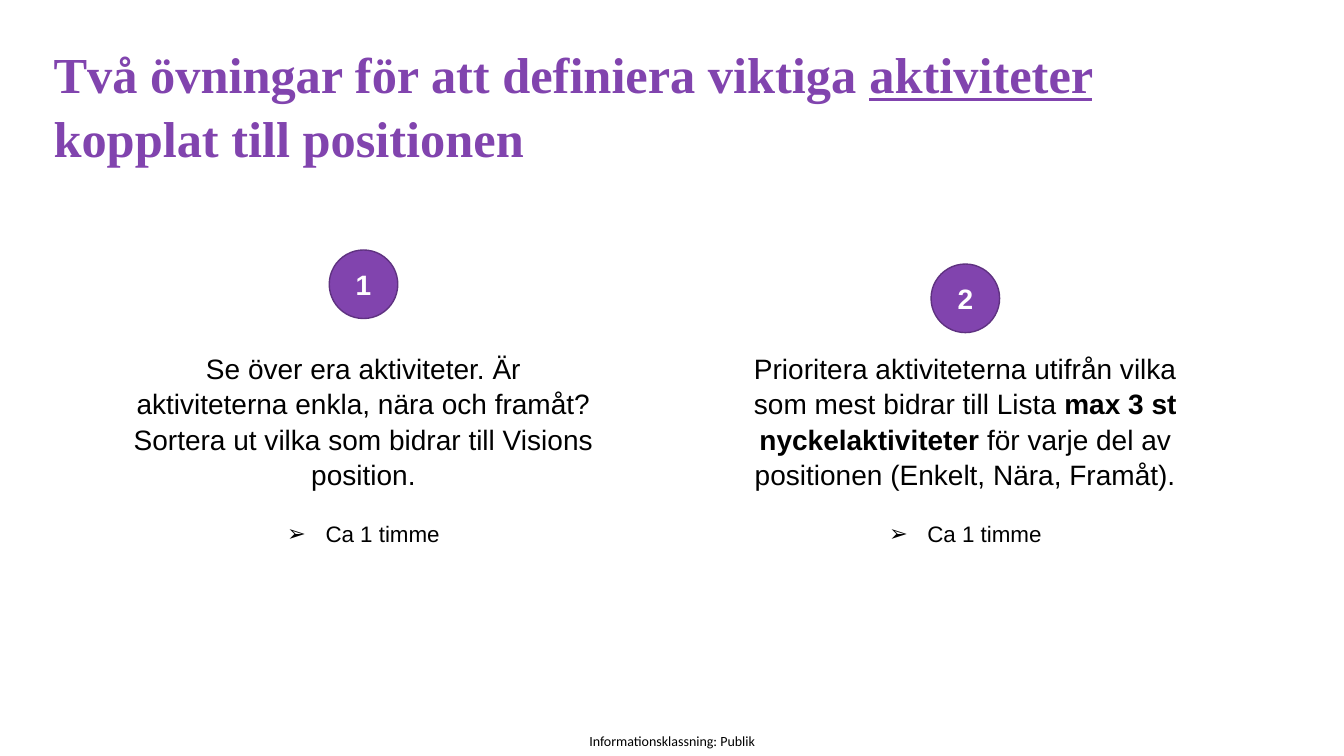
from pptx import Presentation, util as u
from pptx.dml.color import RGBColor as Rgb
from pptx.enum import shapes, text
from pptx.oxml import parse_xml
from pptx.oxml.ns import nsdecls

theme = {
    "plum": Rgb.from_string("8144AE"), "edge": Rgb.from_string("5F3281"),
    "ink": Rgb.from_string("000000"), "white": Rgb.from_string("FFFFFF"),
    "serif": "Times New Roman", "sans": "Arial", "foot": "Calibri",
    "head": 36, "main": 20, "note": 16, "small": 10, "lead": 1.05,
}

deck = Presentation()
deck.slide_width, deck.slide_height = u.Inches(13.33), u.Inches(7.5)
col, row = deck.slide_width / 100, deck.slide_height / 100
slide = deck.slides.add_slide(deck.slide_layouts[3])
title, *lists = slide.placeholders


def area(x, y, w, h):
    return [round(n) for n in (x * col, y * row, w * col, h * row)]


def style(para, face, size, tint, align, bold=False):
    para.alignment = align
    for run in para.runs:
        run.font.name, run.font.size = face, u.Pt(size)
        run.font.color.rgb, run.font.bold = tint, bold


mid = text.PP_ALIGN.CENTER

title.left, title.top, title.width, title.height = area(3.98, 5.33, 87, 18.9)
frame = title.text_frame
frame.margin_left = frame.margin_top = frame.margin_right = frame.margin_bottom = 0
frame.vertical_anchor = text.MSO_ANCHOR.TOP
frame.auto_size = text.MSO_AUTO_SIZE.NONE
para = frame.paragraphs[0]
for part in ("Två övningar för att definiera viktiga ", "aktiviteter ", "kopplat till positionen"):
    para.add_run().text = part
para.line_spacing = theme["lead"]
style(para, theme["serif"], theme["head"], theme["plum"], text.PP_ALIGN.LEFT, True)
para.runs[1].font.underline = True

steps = [
    (33.07, [["Se över era aktiviteter. Är aktiviteterna enkla, nära och framåt?"],
             ["Sortera ut vilka som bidrar till Visions position."]]),
    (34.93, [["Prioritera aktiviteterna utifrån vilka som mest bidrar till Lista ",
              "max 3 st nyckelaktiviteter",
              " för varje del av positionen (Enkelt, Nära, Framåt)."]]),
]
wide, ball = 36.53, 5.1
for i, (top, lines) in enumerate(steps):
    left = 8.78 + i * 44.78
    body = lists[i]
    body.left, body.top, body.width, body.height = area(left, 45.6, wide, 26.5)
    frame = body.text_frame
    frame.auto_size = text.MSO_AUTO_SIZE.NONE
    for n, parts in enumerate(lines + [["Ca 1 timme"]]):
        para = frame.add_paragraph() if n else frame.paragraphs[0]
        last = n == len(lines)
        for part in parts:
            para.add_run().text = part
        props = para._p.get_or_add_pPr()
        dent = u.Inches(0.38) if last else 0
        props.set("marL", str(dent))
        props.set("indent", str(-dent))
        if last:
            props.append(parse_xml(f'<a:buFont {nsdecls("a")} typeface="Arial"/>'))
        mark = 'buChar {} char="➢"' if last else "buNone {}"
        props.append(parse_xml(f'<a:{mark.format(nsdecls("a"))}/>'))
        para.line_spacing = theme["lead"]
        para.space_before = u.Pt(20 if last else 0)
        style(para, theme["sans"], theme["note" if last else "main"], theme["ink"], mid)
        if len(parts) > 1:
            para.runs[1].font.bold = True

    size = u.Inches(0.68)
    x, y, w, h = area(left + (wide - ball) / 2, top, ball, 9.07)
    disc = slide.shapes.add_shape(shapes.MSO_SHAPE.OVAL, x, y, size, size)
    disc.shadow.inherit = False
    disc.fill.solid()
    disc.fill.fore_color.rgb = theme["plum"]
    disc.line.color.rgb, disc.line.width = theme["edge"], u.Pt(1)
    disc.text_frame.text = str(i + 1)
    disc.text_frame.vertical_anchor = text.MSO_ANCHOR.MIDDLE
    style(disc.text_frame.paragraphs[0], theme["sans"], theme["main"], theme["white"], mid, True)

foot = slide.shapes.add_textbox(*area(42.54, 96.13, 14.93, 3.87))
frame = foot.text_frame
frame.word_wrap = True
frame.margin_left = frame.margin_top = frame.margin_right = frame.margin_bottom = 0
frame.vertical_anchor = text.MSO_ANCHOR.MIDDLE
frame.text = "Informationsklassning: Publik"
style(frame.paragraphs[0], theme["foot"], theme["small"], theme["ink"], mid)

deck.save("out.pptx")
